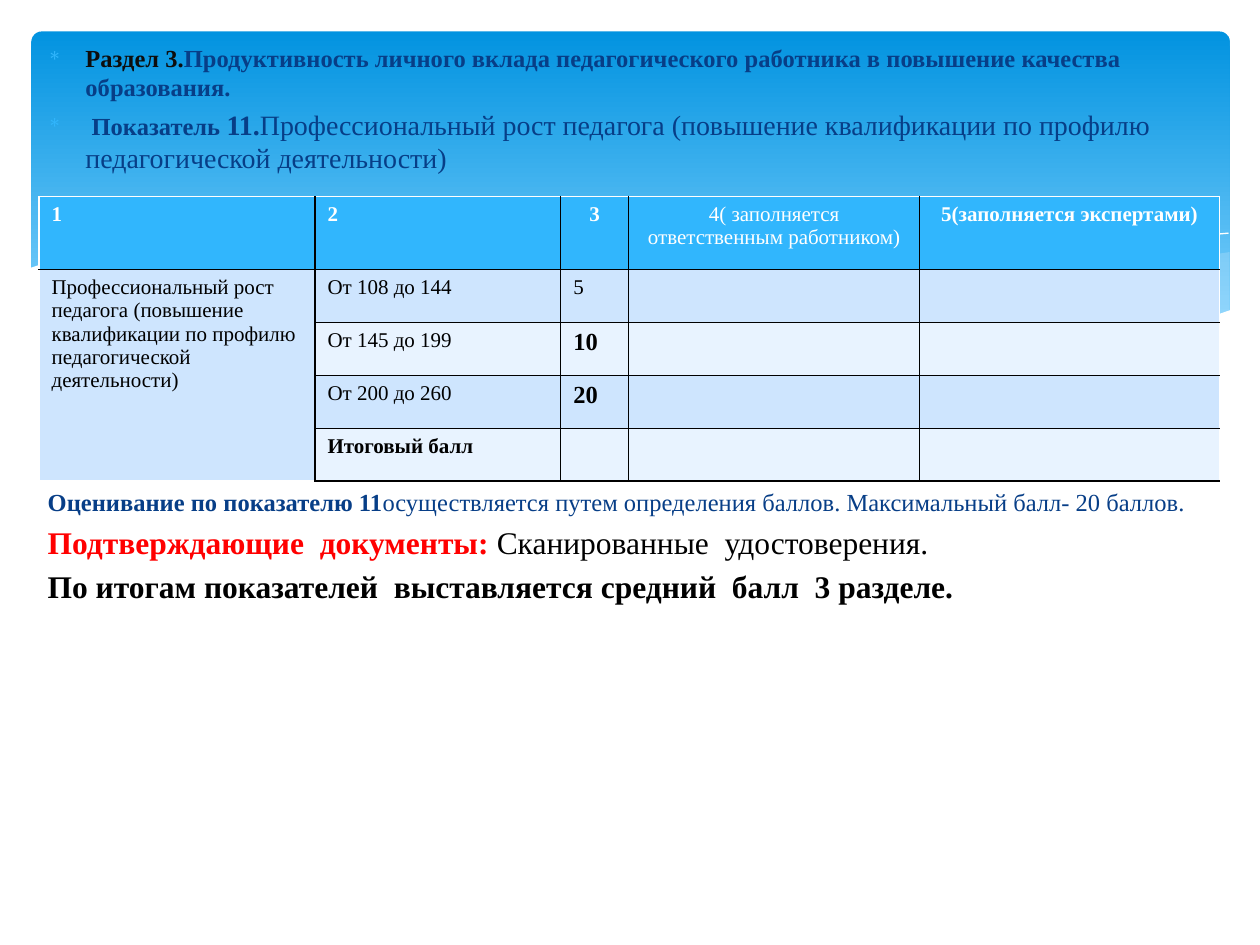
"""Builds the slide on indicator 11, the professional growth of a teacher."""
from dataclasses import dataclass

from lxml.etree import SubElement
from pptx import Presentation
from pptx.dml.color import RGBColor
from pptx.enum.shapes import MSO_SHAPE
from pptx.enum.text import PP_ALIGN
from pptx.oxml.ns import qn
from pptx.util import Inches, Pt


@dataclass(frozen=True)
class Theme:
    font: str = "Times New Roman"
    white: str = "FFFFFF"
    black: str = "000000"
    ink: str = "0D0D0D"
    navy: str = "073E87"
    red: str = "FF0000"
    accent: str = "31B6FD"
    sky_top: str = "0293E0"
    sky_bottom: str = "83D3FE"
    mist: str = "C6E7FC"
    band_dark: str = "CEE5FE"
    band_light: str = "E8F3FF"
    cell: int = 12
    body: int = 14
    indicator: int = 16
    note: int = 18


theme = Theme()


def add_run(paragraph, text, size, color, bold):
    run = paragraph.add_run()
    run.text = text
    run.font.name = theme.font
    run.font.size = Pt(size)
    run.font.bold = bold
    run.font.color.rgb = RGBColor.from_string(color)


def trace_curve(left, right, heights, steps=32):
    """Samples a cubic Bézier curve whose four control points are evenly spaced in x."""
    start, first_pull, second_pull, end = heights
    points = []
    for step in range(steps + 1):
        t = step / steps
        y = (start * (1 - t) ** 3 + 3 * first_pull * t * (1 - t) ** 2
             + 3 * second_pull * t ** 2 * (1 - t) + end * t ** 3)
        points.append((Inches(left + (right - left) * t), Inches(y)))
    return points


presentation = Presentation()
presentation.slide_width = Inches(10)
presentation.slide_height = Inches(7.5)
slide = presentation.slides.add_slide(presentation.slide_layouts[6])

banner = slide.shapes.add_shape(
    MSO_SHAPE.ROUNDED_RECTANGLE, Inches(0.25), Inches(0.25), Inches(9.51), Inches(2.7))
banner.adjustments[0] = 0.03
banner.shadow.inherit = False
banner.line.fill.background()
banner.fill.gradient()
banner.fill.gradient_angle = 270
for stop, color, position in zip(
        banner.fill.gradient_stops, (theme.sky_top, theme.sky_bottom), (0, 0.9)):
    stop.color.rgb = RGBColor.from_string(color)
    stop.position = position

right_wave = (6.61, 9.76, (2.65, 2.51, 2.16, 2), (2.65, 2.8, 2.9, 2.47))
middle_wave = (2.86, 8.93, (1.91, 1.59, 2.55, 2.73), (1.91, 2.21, 2.98, 2.73))
front_wave = (0.23, 9.77, (2.13, 0.99, 3.65, 2.46), (3.29, 3.29, 3.29, 3.29))
long_line = (3.09, 9.07, (1.95, 1.72, 2.15, 2.72), None)
short_line = (6.13, 9.75, (2.57, 2.24, 1.96, 1.85), None)

for (left, right, upper_heights, lower_heights), color, opacity in (
        (right_wave, theme.mist, 29), (middle_wave, theme.mist, 40),
        (long_line, theme.white, 100), (short_line, theme.white, 100),
        (front_wave, theme.white, 100)):
    is_filled = lower_heights is not None
    outline = trace_curve(left, right, upper_heights)
    if is_filled:
        outline += reversed(trace_curve(left, right, lower_heights))
    builder = slide.shapes.build_freeform(*outline[0])
    builder.add_line_segments(outline[1:], close=is_filled)
    wave = builder.convert_to_shape()
    wave.shadow.inherit = False
    if is_filled:
        wave.line.fill.background()
        wave.fill.solid()
        wave.fill.fore_color.rgb = RGBColor.from_string(color)
        color_element = wave._element.spPr.find(qn("a:solidFill"))[0]
        SubElement(color_element, qn("a:alpha"), val=str(opacity * 1000))
    else:
        wave.fill.background()
        wave.line.color.rgb = RGBColor.from_string(color)
        wave.line.width = Pt(0)

heading = [
    [("Раздел 3.", theme.body, theme.ink, True),
     ("Продуктивность личного вклада педагогического работника в повышение качества "
      "образования.", theme.body, theme.navy, True)],
    [(" Показатель ", theme.body, theme.navy, True),
     ("11.", theme.indicator, theme.navy, True),
     ("Профессиональный рост педагога (повышение квалификации по профилю "
      "педагогической деятельности)", theme.indicator, theme.navy, False)]]
notes = [
    [("Оценивание по показателю 11", theme.body, theme.navy, True),
     ("осуществляется путем определения баллов. Максимальный балл- 20 баллов.",
      theme.body, theme.navy, False)],
    [("Подтверждающие  документы: ", theme.note, theme.red, True),
     ("Сканированные  удостоверения.", theme.note, theme.black, False)],
    [("По итогам показателей  выставляется средний  балл  3 разделе.",
      theme.note, theme.black, True)]]

for paragraphs, top, height, is_bulleted in (
        (heading, 0.29, 1.2, True), (notes, 3.82, 1.1, False)):
    box = slide.shapes.add_textbox(Inches(0.28), Inches(top), Inches(9.41), Inches(height))
    frame = box.text_frame
    frame.word_wrap = True
    for index, runs in enumerate(paragraphs):
        paragraph = frame.add_paragraph() if index else frame.paragraphs[0]
        paragraph.line_spacing = 1.0
        largest_size = max(size for text, size, color, bold in runs)
        paragraph.space_before = Pt(0.2 * largest_size if index else 0)
        if is_bulleted:
            properties = paragraph._p.get_or_add_pPr()
            properties.set("marL", str(Inches(0.3)))
            properties.set("indent", str(-Inches(0.3)))
            bullet_color = SubElement(properties, qn("a:buClr"))
            SubElement(bullet_color, qn("a:srgbClr"), val=theme.accent)
            SubElement(properties, qn("a:buSzPct"), val="80000")
            SubElement(properties, qn("a:buChar"), char="∗")
        for run in runs:
            add_run(paragraph, *run)

column_widths = (2.19, 1.95, 0.54, 2.31, 2.38)
row_heights = (0.58, 0.42, 0.42, 0.42, 0.42)
rows = [
    ("1", "2", "3", "4( заполняется ответственным работником)", "5(заполняется экспертами)"),
    ("Профессиональный рост педагога (повышение квалификации по профилю "
     "педагогической деятельности)", "От 108 до 144", "5", "", ""),
    ("", "От 145 до 199", "10", "", ""),
    ("", "От 200 до 260", "20", "", ""),
    ("", "Итоговый балл", "", "", "")]
large_texts = {"10", "20"}
bold_texts = large_texts | {"1", "2", "3", "5(заполняется экспертами)", "Итоговый балл"}

table = slide.shapes.add_table(
    len(rows), len(column_widths), Inches(0.31), Inches(1.56),
    Inches(sum(column_widths)), Inches(sum(row_heights))).table
table.first_row = False
table.horz_banding = False
for column, width in zip(table.columns, column_widths):
    column.width = Inches(width)
for row, height in zip(table.rows, row_heights):
    row.height = Inches(height)
table.cell(1, 0).merge(table.cell(4, 0))

for row_index, texts in enumerate(rows):
    for column_index, text in enumerate(texts):
        cell = table.cell(row_index, column_index)
        is_header = row_index == 0
        is_first_column = column_index == 0
        white_sides = {
            "L": is_first_column,
            "R": column_index == len(texts) - 1,
            "T": is_header or (is_first_column and row_index > 1),
            "B": is_first_column and not is_header}
        for side, is_white in white_sides.items():
            border = SubElement(
                cell._tc.get_or_add_tcPr(), qn(f"a:ln{side}"), w=str(Pt(1)))
            border_fill = SubElement(border, qn("a:solidFill"))
            SubElement(border_fill, qn("a:srgbClr"),
                       val=theme.white if is_white else theme.black)
        band = theme.band_dark if row_index % 2 or is_first_column else theme.band_light
        cell.fill.solid()
        cell.fill.fore_color.rgb = RGBColor.from_string(theme.accent if is_header else band)
        paragraph = cell.text_frame.paragraphs[0]
        if is_header and column_index > 1:
            paragraph.alignment = PP_ALIGN.CENTER
        if text:
            add_run(paragraph, text, theme.body if text in large_texts else theme.cell,
                    theme.white if is_header else theme.black, text in bold_texts)

presentation.save("out.pptx")
